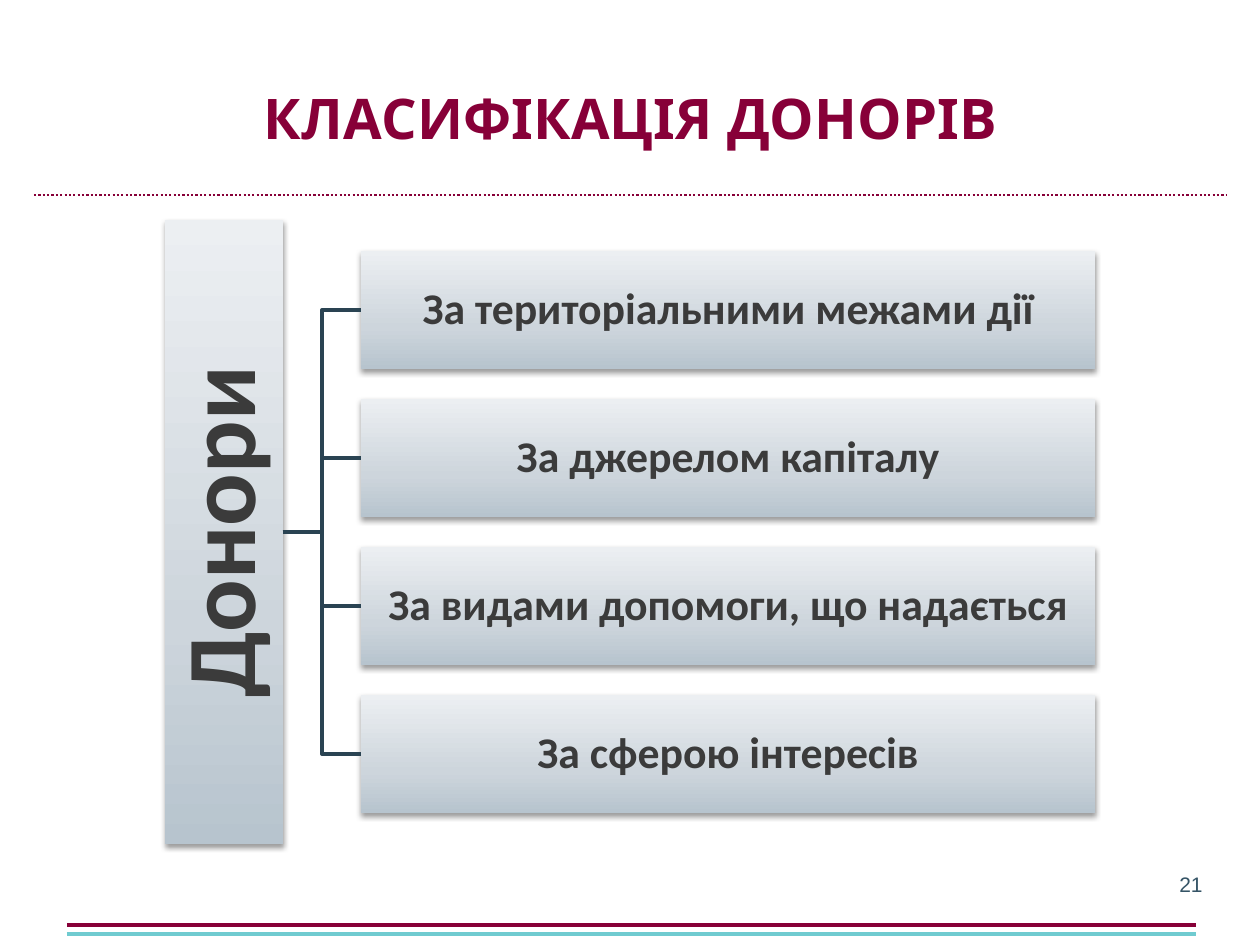
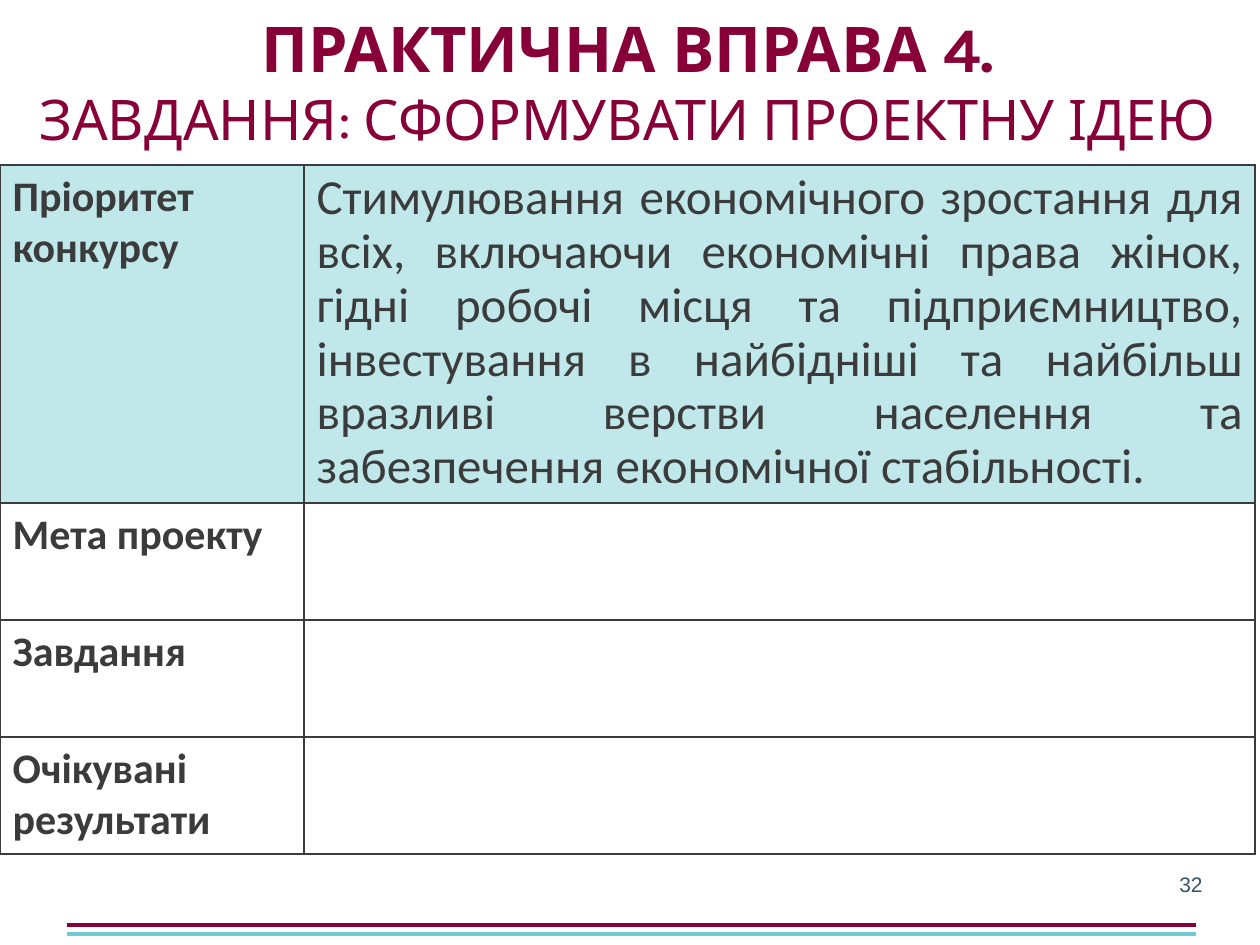
from lxml import etree
from pptx import Presentation
from pptx import util as u
from pptx.dml.color import RGBColor
from pptx.enum import dml, shapes, text
from pptx.oxml import parse_xml
from pptx.oxml.ns import qn

EMU_PER_PX = 914400 / 126
NS = 'xmlns:a="http://schemas.openxmlformats.org/drawingml/2006/main"'
COLORS = {
    "wine": "870038", "aqua": "70CBD0", "pale_aqua": "C0E8EA",
    "ink": "3B3B3B", "branch": "2A4352", "page_number": "355466",
    "steel": "B7C4CE", "silver": "CDD5DC", "mist": "ECEFF2", "shadow": "000000",
}
TITLE_FONT, BODY_FONT, NUMBER_FONT = "Karla", "Calibri", "Arial"
ALIGN, ANCHOR = text.PP_ALIGN, text.MSO_ANCHOR


def px(n):
    return u.Emu(round(n * EMU_PER_PX))


def rgb(name):
    return RGBColor.from_string(COLORS[name])


class Deck:
    def __init__(self):
        self.prs = Presentation()
        self.prs.slide_width, self.prs.slide_height = px(1260), px(945)
        self.slide = None

    def new_slide(self, number):
        """Start a slide with the shared footer."""
        self.slide = self.prs.slides.add_slide(self.prs.slide_layouts[6])
        self.textbox((921, 859, 294, 50), [(str(number), 12, False)],
                     NUMBER_FONT, "page_number", ALIGN.RIGHT)
        self.rule(67, 1196, 925, "wine", 2.25)
        self.rule(67, 1196, 934, "aqua", 2.25)

    def add_runs(self, frame, runs, font=BODY_FONT, color="ink",
                 align=ALIGN.LEFT, spacing=None):
        """Fill a text frame; each run is (wording, size, bold), one per line."""
        frame.word_wrap = True
        paragraph = frame.paragraphs[0]
        paragraph.alignment = align
        if spacing:
            paragraph.line_spacing = spacing
        for i, (wording, size, bold) in enumerate(runs):
            if i:
                paragraph.add_line_break()
            run = paragraph.add_run()
            run.text = wording
            run.font.name, run.font.size, run.font.bold = font, u.Pt(size), bold
            run.font.color.rgb = rgb(color)

    def textbox(self, box, runs, font, color, align):
        frame = self.slide.shapes.add_textbox(*map(px, box)).text_frame
        frame.vertical_anchor = ANCHOR.MIDDLE
        self.add_runs(frame, runs, font, color, align)

    def title(self, box, runs):
        self.textbox(box, runs, TITLE_FONT, "wine", ALIGN.CENTER)

    def connector(self, kind, ends, color, width):
        line = self.slide.shapes.add_connector(kind, *map(px, ends))
        line.line.color.rgb = rgb(color)
        line.line.width = u.Pt(width)
        etree.SubElement(line._element.spPr, qn("a:effectLst"))
        return line

    def rule(self, left, right, y, color, width):
        return self.connector(shapes.MSO_CONNECTOR.STRAIGHT,
                              (left, y, right, y), color, width)

    def branch(self, parent, child):
        """Elbow from the parent's right side to the child's left side."""
        line = self.connector(shapes.MSO_CONNECTOR.ELBOW, (0, 0, 0, 0), "branch", 2)
        line.begin_connect(parent, 3)
        line.end_connect(child, 1)

    def panel(self, box, wording, size, inset, upright=False):
        """Shaded rectangle with a soft shadow and a bold centred label."""
        panel = self.slide.shapes.add_shape(
            shapes.MSO_SHAPE.RECTANGLE, *map(px, box))
        panel.line.fill.background()
        panel.shadow.inherit = False
        props = panel._element.spPr
        stops = "".join(
            f'<a:gs pos="{at * 1000}"><a:srgbClr val="{COLORS[name]}"/></a:gs>'
            for at, name in ((0, "steel"), (35, "silver"), (100, "mist")))
        props.find(qn("a:ln")).addprevious(parse_xml(
            f'<a:gradFill {NS}><a:gsLst>{stops}</a:gsLst>'
            '<a:lin ang="16200000" scaled="0"/></a:gradFill>'))
        props.find(qn("a:effectLst")).append(parse_xml(
            f'<a:outerShdw {NS} blurRad="{u.Pt(3.1)}" dist="{u.Pt(1.6)}" '
            f'dir="5400000" rotWithShape="0"><a:srgbClr val="{COLORS["shadow"]}">'
            '<a:alpha val="38000"/></a:srgbClr></a:outerShdw>'))
        frame = panel.text_frame
        frame.margin_left = frame.margin_right = px(inset)
        frame.margin_top = frame.margin_bottom = px(inset)
        frame.vertical_anchor = ANCHOR.MIDDLE
        if upright:
            frame._txBody.bodyPr.set("vert", "vert270")
        self.add_runs(frame, [(wording, size, True)], align=ALIGN.CENTER, spacing=0.9)
        return panel

    def table(self, left, top, widths, heights):
        table = self.slide.shapes.add_table(
            len(heights), len(widths), px(left), px(top),
            px(sum(widths)), px(sum(heights))).table
        table.first_row = table.horz_banding = False
        for column, width in zip(table.columns, widths):
            column.width = px(width)
        for row, height in zip(table.rows, heights):
            row.height = px(height)
        return table

    def cell(self, cell, fill=None):
        """Set the fill and a thin border on all four sides."""
        if fill:
            cell.fill.solid()
            cell.fill.fore_color.rgb = rgb(fill)
        else:
            cell.fill.background()
        props = cell._tc.get_or_add_tcPr()
        for i, side in enumerate("LRTB"):
            props.insert(i, parse_xml(
                f'<a:ln{side} {NS} w="{u.Pt(1)}"><a:solidFill>'
                f'<a:srgbClr val="{COLORS["ink"]}"/></a:solidFill></a:ln{side}>'))


def donor_classification(deck):
    deck.new_slide(21)
    deck.rule(34, 1226, 195, "wine", 1.25).line.dash_style = dml.MSO_LINE.ROUND_DOT
    deck.title((35, 38, 1191, 158), [("КЛАСИФІКАЦІЯ ДОНОРІВ", 32, True)])

    # Tree: donors on the left, criteria on the right
    donors = deck.panel((165, 220, 118, 624), "Донори", 56, 5, upright=True)
    criteria = ("За територіальними межами дії", "За джерелом капіталу",
                "За видами допомоги, що надається", "За сферою інтересів")
    for i, criterion in enumerate(criteria):
        panel = deck.panel((361, 251 + 148 * i, 734, 118), criterion, 25, 3)
        deck.branch(donors, panel)


def project_idea_exercise(deck):
    deck.new_slide(32)

    # Worksheet: the priority is given, the other rows are to be filled in
    worksheet = deck.table(0, 165, (304, 951), (338, 117, 117, 117))
    priority = ("Стимулювання економічного зростання для всіх, включаючи економічні "
                "права жінок, гідні робочі місця та підприємництво, інвестування в "
                "найбідніші та найбільш вразливі верстви населення та забезпечення "
                "економічної стабільності.")
    headings = ("Пріоритет конкурсу", "Мета проекту", "Завдання",
                "Очікувані результати")
    for row, heading in enumerate(headings):
        for column in range(2):
            deck.cell(worksheet.cell(row, column), None if row else "pale_aqua")
        deck.add_runs(worksheet.cell(row, 0).text_frame, [(heading, 24, True)])
    deck.add_runs(worksheet.cell(0, 1).text_frame, [(priority, 28, False)],
                  align=ALIGN.JUSTIFY, spacing=0.9)

    deck.title((13, -14, 1230, 189), [
        ("ПРАКТИЧНА ВПРАВА 4.", 36, True),
        ("ЗАВДАННЯ: СФОРМУВАТИ ПРОЕКТНУ ІДЕЮ", 32, False)])


def main():
    deck = Deck()
    donor_classification(deck)
    project_idea_exercise(deck)
    deck.prs.save("out.pptx")


if __name__ == "__main__":
    main()
